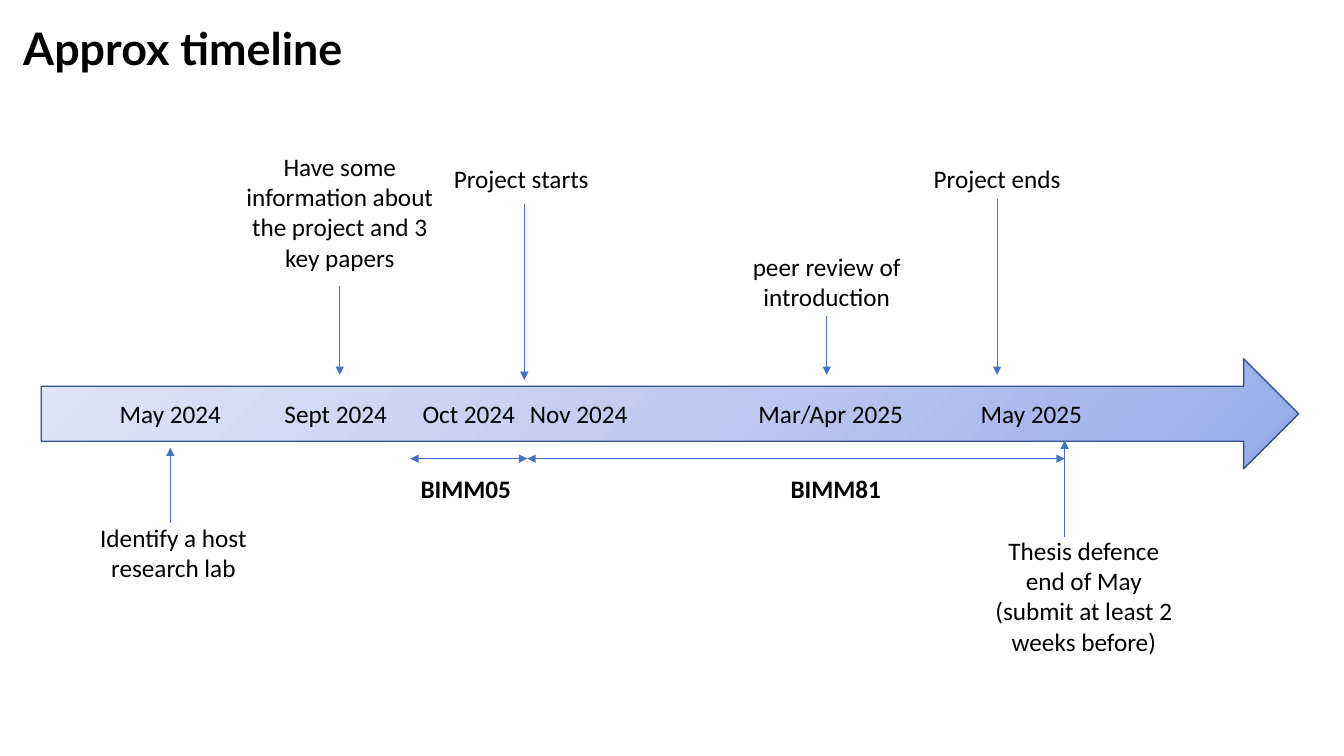
from collections import namedtuple

from lxml import etree
from pptx import Presentation
from pptx.dml.color import RGBColor
from pptx.enum.shapes import MSO_CONNECTOR, MSO_SHAPE
from pptx.enum.text import MSO_ANCHOR, PP_ALIGN
from pptx.oxml import parse_xml
from pptx.oxml.ns import qn
from pptx.util import Inches, Pt

STRAIGHT = MSO_CONNECTOR.STRAIGHT
RIGHT_ARROW = MSO_SHAPE.RIGHT_ARROW
TOP, MIDDLE = MSO_ANCHOR.TOP, MSO_ANCHOR.MIDDLE
LEFT, CENTER = PP_ALIGN.LEFT, PP_ALIGN.CENTER
BOTTOM_SIDE = 2

BLACK, ARROW_BLUE, BAND_EDGE = "000000", "4472C4", "325491"
BAND_STOPS = [(0, "96ABEA"), (50, "C0CBF0"), (100, "E0E5F7")]
DRAWING_NS = "http://schemas.openxmlformats.org/drawingml/2006/main"

LABEL_WIDTH = 2.16
LINE_HEIGHT = 0.3
LABEL_PADDING = 0.1

Box = namedtuple("Box", "left top width height")
Milestone = namedtuple("Milestone", "text lines center top arrow_x start end joined")

DATES = [
    ("May 2024", 1.28),
    ("Sept 2024", 2.92),
    ("Oct 2024", 4.24),
    ("Nov 2024", 5.33),
    ("Mar/Apr 2025", 7.83),
    ("May 2025", 9.82),
]
MILESTONES = [
    Milestone("Identify a host research lab", 2, 1.31, 1.57, 1.28, 1.63, 0.88, False),
    Milestone("Have some information about the project and 3 key papers",
              4, 2.96, -2.11, 2.96, -0.72, 0.16, False),
    Milestone("Project starts", 1, 4.76, -1.99, 4.79, -1.54, 0.21, False),
    Milestone("peer review of introduction", 2, 7.79, -1.12, 7.79, -0.41, 0.16, True),
    Milestone("Project ends", 1, 9.48, -1.99, 9.48, -1.59, 0.16, True),
    Milestone("Thesis defence\nend of May\n(submit at least 2 weeks before)",
              4, 10.34, 1.7, 10.15, 1.77, 0.81, False),
]
COURSES = [("BIMM05", 3.66, 4.82, 4.21), ("BIMM81", 4.82, 10.15, 7.88)]


def color(hex_string):
    return RGBColor.from_string(hex_string)


def write_text(holder, text, font_name, size, bold, align, anchor):
    frame = holder.text_frame
    frame.word_wrap = True
    frame.vertical_anchor = anchor
    frame.text = text
    for paragraph in frame.paragraphs:
        paragraph.alignment = align
        font = paragraph.font
        font.name, font.size, font.bold = font_name, Pt(size), bold
        font.color.rgb = color(BLACK)


def add_label(slide, text, center, top, lines=1, bold=False):
    label = slide.shapes.add_textbox(
        Inches(center - LABEL_WIDTH / 2), Inches(top),
        Inches(LABEL_WIDTH), Inches(lines * LINE_HEIGHT + LABEL_PADDING))
    write_text(label, text, "Calibri", 18, bold, CENTER, TOP)
    return label


def add_arrow(slide, start, end, double=False):
    arrow = slide.shapes.add_connector(STRAIGHT, *map(Inches, start + end))
    arrow.line.color.rgb = color(ARROW_BLUE)
    arrow.line.width = Pt(0.5)
    outline = arrow.line._get_or_add_ln()
    for tag in ("a:headEnd", "a:tailEnd") if double else ("a:tailEnd",):
        etree.SubElement(outline, qn(tag), type="triangle")
    etree.SubElement(arrow._element.spPr, qn("a:effectLst"))
    return arrow


def fill_radial(shape, stops):
    stop_xml = "".join(
        f'<a:gs pos="{percent * 1000}"><a:srgbClr val="{hex_string}"/></a:gs>'
        for percent, hex_string in stops)
    gradient = parse_xml(
        f'<a:gradFill xmlns:a="{DRAWING_NS}" rotWithShape="1"><a:gsLst>{stop_xml}</a:gsLst>'
        '<a:path path="circle"><a:fillToRect l="100000" t="100000"/></a:path>'
        '<a:tileRect r="-100000" b="-100000"/></a:gradFill>')
    shape._element.spPr.find(qn("a:prstGeom")).addnext(gradient)


def add_title(slide, box):
    title = slide.shapes.title
    title.left, title.top, title.width, title.height = map(Inches, box)
    write_text(title, "Approx timeline", "Lato", 32, True, LEFT, MIDDLE)


def add_date_band(slide, box):
    band = slide.shapes.add_shape(RIGHT_ARROW, *map(Inches, box))
    band.shadow.inherit = False
    fill_radial(band, BAND_STOPS)
    band.line.color.rgb = color(BAND_EDGE)
    band.line.width = Pt(1)
    label_top = box.top + (box.height - LINE_HEIGHT - LABEL_PADDING) / 2
    for date, center in DATES:
        add_label(slide, date, box.left + center, label_top)


def add_milestones(slide, box):
    for milestone in MILESTONES:
        label = add_label(slide, milestone.text, box.left + milestone.center,
                          box.top + milestone.top, milestone.lines)
        x = box.left + milestone.arrow_x
        arrow = add_arrow(slide, (x, box.top + milestone.start),
                          (x, box.top + milestone.end))
        if milestone.joined:
            arrow.begin_connect(label, BOTTOM_SIDE)


def add_courses(slide, box):
    y = box.top + 0.99
    for course, start, end, center in COURSES:
        add_arrow(slide, (box.left + start, y), (box.left + end, y), double=True)
        add_label(slide, course, box.left + center, y + 0.1, bold=True)


def main():
    presentation = Presentation()
    presentation.slide_width = Inches(13.33)
    presentation.slide_height = Inches(7.5)
    slide = presentation.slides.add_slide(presentation.slide_layouts.get_by_name("Title Only"))
    timeline = Box(0.41, 3.56, 12.47, 1.09)
    add_title(slide, Box(0.13, 0.15, 4.28, 0.64))
    add_date_band(slide, timeline)
    add_milestones(slide, timeline)
    add_courses(slide, timeline)
    presentation.save("out.pptx")


if __name__ == "__main__":
    main()
